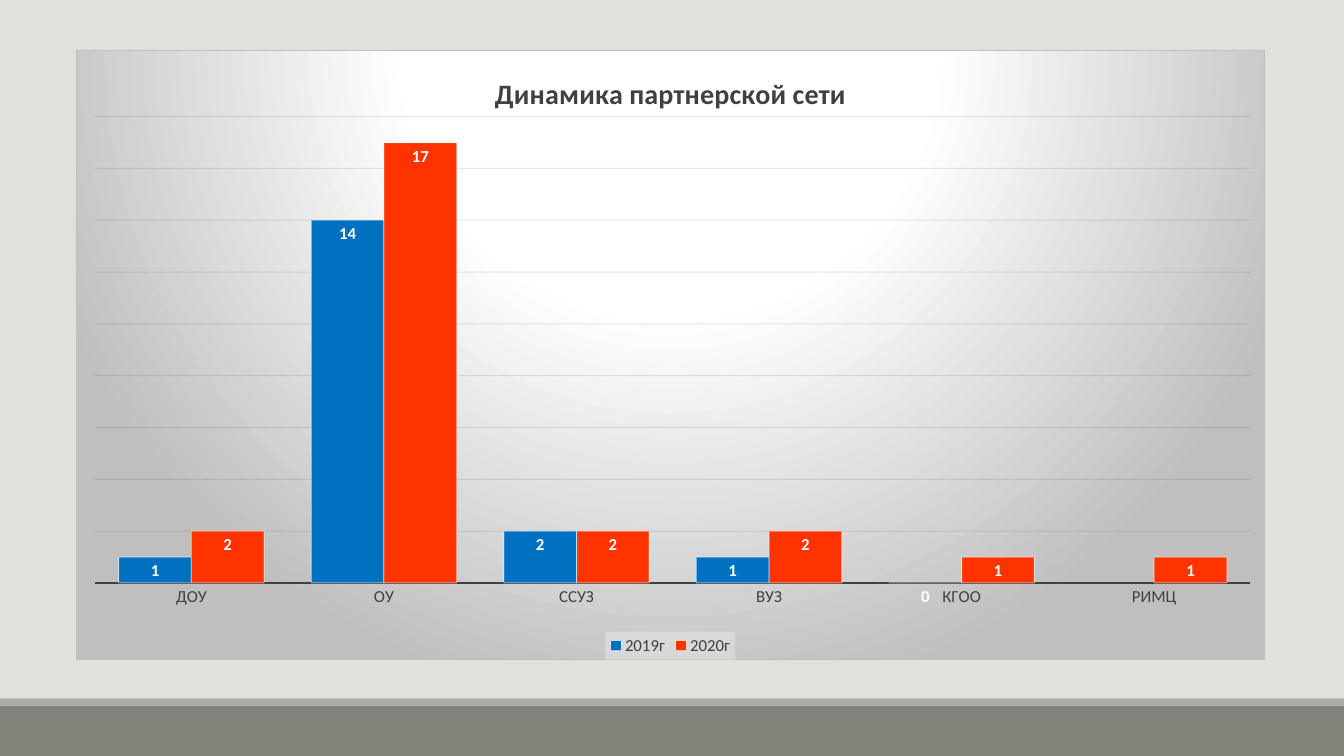
import pptx
import pptx.chart.data
import pptx.dml.color
import pptx.enum.chart
import pptx.enum.shapes
import pptx.oxml
import pptx.oxml.ns
import pptx.util

Inches = pptx.util.Inches
Pt = pptx.util.Pt
RGBColor = pptx.dml.color.RGBColor
chart_enum = pptx.enum.chart

BACKGROUND = RGBColor(0xE1, 0xE1, 0xDB)
FOOTER = RGBColor(0x82, 0x84, 0x7C)
FOOTER_EDGE = RGBColor(0xAC, 0xAD, 0xA8)
DARK = RGBColor(0x40, 0x40, 0x40)
GRID = RGBColor(0x0D, 0x0D, 0x0D)
WHITE = RGBColor(0xFF, 0xFF, 0xFF)
BLUE = RGBColor(0x00, 0x70, 0xC0)
RED = RGBColor(0xFF, 0x33, 0x00)
NAMESPACES = pptx.oxml.ns.nsdecls("c", "a")


def style_font(font, size, color, bold=False):
    font.name = "Calibri"
    font.size = Pt(size)
    font.bold = bold
    font.color.rgb = color


def set_alpha(color_elements, percent):
    for color_element in color_elements:
        alpha = f'<a:alpha {NAMESPACES} val="{percent * 1000}"/>'
        color_element.append(pptx.oxml.parse_xml(alpha))


deck = pptx.Presentation()
deck.slide_width = Inches(13.33)
deck.slide_height = Inches(7.5)
slide = deck.slides.add_slide(deck.slide_layouts[6])
slide.background.fill.solid()
slide.background.fill.fore_color.rgb = BACKGROUND

for top, height, color in ((7, 0.5, FOOTER), (6.93, 0.07, FOOTER_EDGE)):
    band = slide.shapes.add_shape(
        pptx.enum.shapes.MSO_SHAPE.RECTANGLE,
        Inches(0), Inches(top), deck.slide_width, Inches(height))
    band.shadow.inherit = False
    band.fill.solid()
    band.fill.fore_color.rgb = color
    band.line.fill.background()

partners = pptx.chart.data.CategoryChartData()
partners.categories = ["ДОУ", "ОУ", "ССУЗ", "ВУЗ", "КГОО", "РИМЦ"]
partners.add_series("2019г", (1, 14, 2, 1, 0, None))
partners.add_series("2020г", (2, 17, 2, 2, 1, 1))
chart = slide.shapes.add_chart(
    chart_enum.XL_CHART_TYPE.COLUMN_CLUSTERED,
    Inches(0.75), Inches(0.5), Inches(11.8), Inches(6.05), partners).chart
style_font(chart.font, 10, RGBColor(0, 0, 0))

chart.has_title = True
title = chart.chart_title.text_frame
title.text = "Динамика партнерской сети"
style_font(title.paragraphs[0].font, 20, DARK, True)

plot = chart.plots[0]
plot.gap_width = 65
plot.overlap = 0
plot.vary_by_categories = False
for series, color in zip(plot.series, (BLUE, RED)):
    series.format.fill.solid()
    series.format.fill.fore_color.rgb = color
    series.format.line.color.rgb = WHITE
    series.format.line.width = Pt(0.75)
    labels = series.data_labels
    labels.show_value = True
    labels.position = chart_enum.XL_LABEL_POSITION.INSIDE_END
    style_font(labels.font, 12, WHITE, True)
set_alpha(chart.element.xpath(".//c:ser/c:spPr/a:ln//a:srgbClr"), 50)

category_axis = chart.category_axis
category_axis.major_tick_mark = chart_enum.XL_TICK_MARK.NONE
category_axis.format.line.color.rgb = DARK
category_axis.format.line.width = Pt(1.5)
style_font(category_axis.tick_labels.font, 12, DARK)

value_axis = chart.value_axis
value_axis.visible = False
value_axis.minimum_scale = 0
value_axis.maximum_scale = 18
value_axis.major_unit = 2
value_axis.has_major_gridlines = True
value_axis.major_gridlines.format.line.color.rgb = GRID
value_axis.major_gridlines.format.line.width = Pt(0.75)
set_alpha(chart.element.xpath(".//c:majorGridlines//a:srgbClr"), 10)

chart.has_legend = True
chart.legend.position = chart_enum.XL_LEGEND_POSITION.BOTTOM
chart.legend.include_in_layout = False
style_font(chart.legend.font, 12, DARK)
legend_fill = pptx.oxml.parse_xml(
    f'<c:spPr {NAMESPACES}><a:solidFill><a:srgbClr val="F2F2F2">'
    '<a:alpha val="39000"/></a:srgbClr></a:solidFill></c:spPr>')
chart.element.xpath(".//c:legend/c:txPr")[0].addprevious(legend_fill)

plot_area = chart.element.xpath(".//c:plotArea")[0]
for layout in plot_area.xpath("./c:layout"):
    plot_area.remove(layout)
plot_area.insert(0, pptx.oxml.parse_xml(
    f'<c:layout {NAMESPACES}><c:manualLayout><c:layoutTarget val="inner"/>'
    '<c:xMode val="edge"/><c:yMode val="edge"/><c:x val="0.016"/>'
    '<c:y val="0.108"/><c:w val="0.972"/><c:h val="0.766"/>'
    '</c:manualLayout></c:layout>'))

stops = "".join(
    f'<a:gs pos="{position * 1000}"><a:srgbClr val="{color}"/></a:gs>'
    for position, color in ((0, "FFFFFF"), (39, "FFFFFF"), (100, "BFBFBF")))
chart_frame = pptx.oxml.parse_xml(
    f'<c:spPr {NAMESPACES}><a:gradFill><a:gsLst>{stops}</a:gsLst>'
    '<a:path path="circle"><a:fillToRect l="50000" t="-80000" r="50000" '
    'b="180000"/></a:path></a:gradFill><a:ln w="9525"><a:solidFill>'
    '<a:srgbClr val="BFBFBF"/></a:solidFill></a:ln></c:spPr>')
chart.element.xpath("./c:chart")[0].addnext(chart_frame)

deck.save("out.pptx")
